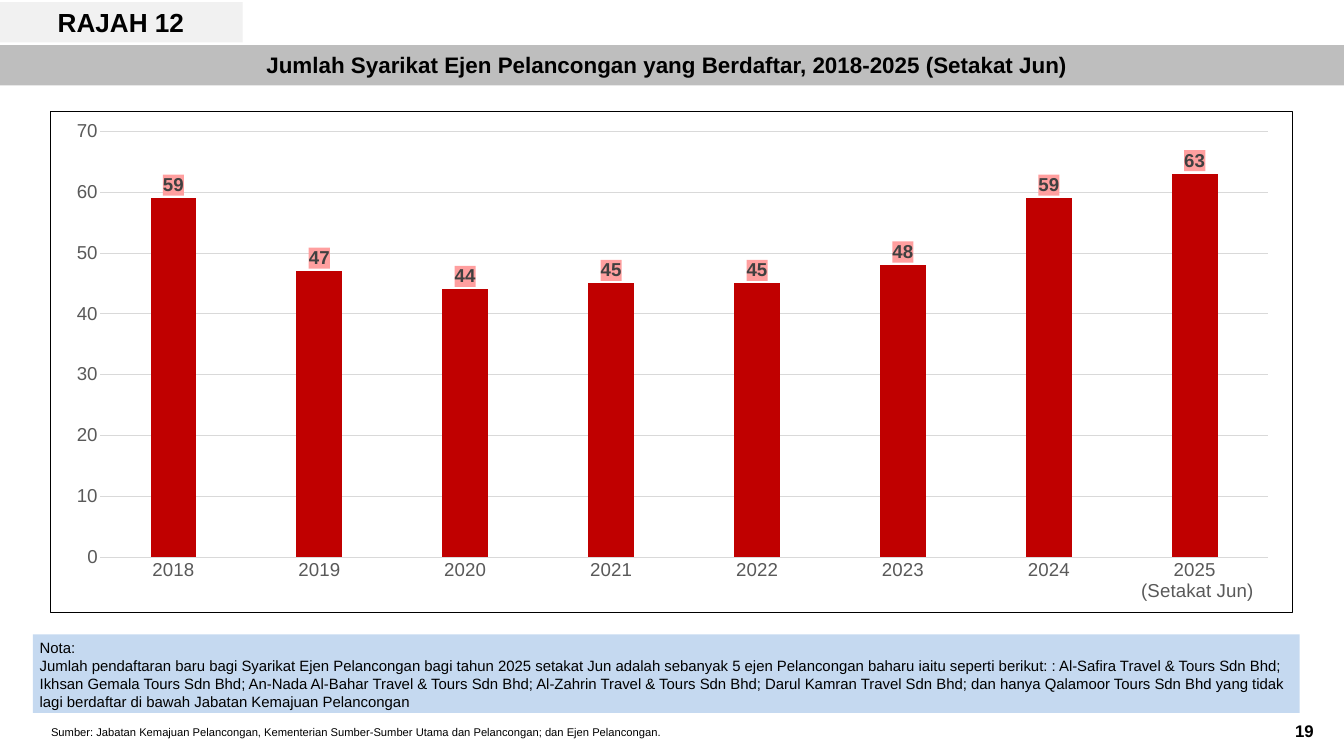
from dataclasses import dataclass
from typing import NamedTuple

from lxml import etree
from pptx import Presentation
from pptx.chart.data import CategoryChartData
from pptx.dml.color import RGBColor
from pptx.enum.chart import XL_CHART_TYPE as ChartType, XL_LABEL_POSITION as LabelPosition
from pptx.enum.chart import XL_TICK_MARK as TickMark
from pptx.enum.shapes import MSO_SHAPE as Preset
from pptx.enum.text import MSO_ANCHOR as Anchor, PP_ALIGN as Align
from pptx.oxml import parse_xml
from pptx.oxml.ns import nsdecls
from pptx.util import Pt


class Box(NamedTuple):
    """A rectangle in points."""
    left: float
    top: float
    width: float
    height: float

    def inner(self, left, top, width, height):
        """Return a box placed relative to this one."""
        return Box(self.left + left, self.top + top, width, height)

    def lengths(self):
        """Return the four sides as lengths."""
        return [Pt(side) for side in self]


@dataclass(frozen=True)
class Theme:
    """Colours, font and type sizes of the deck."""
    font: str = "Arial"
    black: str = "000000"
    white: str = "FFFFFF"
    band: str = "BEBEBE"
    tab: str = "F1F1F1"
    note: str = "C5D9F0"
    bar: str = "C00000"
    label: str = "404040"
    label_fill: str = "FF9F9F"
    axis: str = "595959"
    grid: str = "D9D9D9"
    tab_size: int = 28
    title_size: int = 24
    chart_size: int = 20
    page_size: int = 18
    note_size: int = 16
    source_size: int = 12
    hairline: float = 0.75


THEME = Theme()
PAGE = Box(0, 0, 1440, 810)
COMPANIES = {
    "2018": 59, "2019": 47, "2020": 44, "2021": 45,
    "2022": 45, "2023": 48, "2024": 59, "2025\n (Setakat Jun)": 63,
}
TITLE = "Jumlah Syarikat Ejen Pelancongan yang Berdaftar, 2018-2025 (Setakat Jun)"
NOTE = (
    "Nota:\n"
    "Jumlah pendaftaran baru bagi Syarikat Ejen Pelancongan bagi tahun 2025 setakat Jun "
    "adalah sebanyak 5 ejen Pelancongan baharu iaitu seperti berikut: : "
    "Al-Safira Travel & Tours Sdn Bhd; Ikhsan Gemala Tours Sdn Bhd; "
    "An-Nada Al-Bahar Travel & Tours Sdn Bhd; Al-Zahrin Travel & Tours Sdn Bhd; "
    "Darul Kamran Travel Sdn Bhd; dan hanya Qalamoor Tours Sdn Bhd yang tidak lagi "
    "berdaftar di bawah Jabatan Kemajuan Pelancongan"
)
SOURCE = (
    "Sumber: Jabatan Kemajuan Pelancongan, Kementerian Sumber-Sumber Utama dan "
    "Pelancongan; dan Ejen Pelancongan."
)


def style_font(font, size, color, bold=False):
    """Set the face, size, colour and weight of a font."""
    font.name, font.size, font.bold = THEME.font, Pt(size), bold
    font.color.rgb = RGBColor.from_string(color)


def add_panel(page, box, color):
    """Add a plain filled rectangle."""
    panel = page.shapes.add_shape(Preset.RECTANGLE, *box.lengths())
    panel.shadow.inherit = False
    panel.fill.solid()
    panel.fill.fore_color.rgb = RGBColor.from_string(color)
    panel.line.fill.background()
    return panel


def add_text(page, box, text, size, bold=False, align=Align.LEFT, indent=0, top=0, spacing=None):
    """Add a text box and write its text."""
    shape = page.shapes.add_textbox(*box.lengths())
    frame = shape.text_frame
    frame.word_wrap, frame.vertical_anchor = True, Anchor.TOP
    frame.margin_left = frame.margin_right = frame.margin_bottom = 0
    frame.margin_top = Pt(top)
    frame.text = text
    for para in frame.paragraphs:
        para.alignment = align
        para._p.get_or_add_pPr().set("marL", str(Pt(indent)))
        if spacing:
            para.line_spacing = spacing
        style_font(para.font, size, THEME.black, bold)
        for span in para.runs:
            style_font(span.font, size, THEME.black, bold)


def add_header(page, box):
    """Add the figure tab and the title band."""
    add_panel(page, box.inner(0, 46.2, box.width, 43.2), THEME.band)
    add_text(page, box.inner(248.4, 52, 931, 30), TITLE, THEME.title_size,
             bold=True, align=Align.CENTER, indent=0.7, top=1)
    add_panel(page, box.inner(0, 0, 260, 43.2), THEME.tab)
    add_text(page, box.inner(60.5, 3.8, 138, 35), "RAJAH 12", THEME.tab_size,
             bold=True, indent=1.4, top=1)


def shape_properties(fill, line=None):
    """Return chart shape properties with a fill and an optional outline."""
    def solid(color):
        return f'<a:solidFill><a:srgbClr val="{color}"/></a:solidFill>'
    outline = solid(line) if line else "<a:noFill/>"
    return parse_xml(
        f'<c:spPr {nsdecls("c", "a")}>{solid(fill)}'
        f'<a:ln w="{Pt(THEME.hairline)}">{outline}</a:ln></c:spPr>')


def place_plot(chart, **sides):
    """Fix the inner plot area as fractions of the chart."""
    area = chart._chartSpace.chart.plotArea
    for old in area.findall("{*}layout"):
        area.remove(old)
    parts = {"layoutTarget": "inner", "xMode": "edge", "yMode": "edge", **sides}
    layout = parse_xml(f'<c:layout {nsdecls("c")}><c:manualLayout/></c:layout>')
    for name, value in parts.items():
        tag = etree.QName(layout).namespace
        etree.SubElement(layout[0], f"{{{tag}}}{name}").set("val", str(value))
    area.insert(0, layout)


def style_axis(axis):
    """Give an axis its type and remove its tick marks."""
    style_font(axis.tick_labels.font, THEME.chart_size, THEME.axis)
    axis.major_tick_mark = axis.minor_tick_mark = TickMark.NONE


def style_line(line):
    """Make a chart line a pale hairline."""
    line.color.rgb = RGBColor.from_string(THEME.grid)
    line.width = Pt(THEME.hairline)


def add_company_chart(page, box):
    """Add the column chart of registered companies."""
    data = CategoryChartData()
    data.categories = list(COMPANIES)
    data.add_series("Series 1", list(COMPANIES.values()))
    chart = page.shapes.add_chart(ChartType.COLUMN_CLUSTERED, *box.lengths(), data).chart
    chart.has_legend = chart.has_title = False
    style_font(chart.font, THEME.chart_size, THEME.black)
    chart._chartSpace.find("{*}txPr").addprevious(shape_properties(THEME.white, THEME.black))
    place_plot(chart, x=0.04, y=0.04, w=0.94, h=0.85)

    years, counts = chart.category_axis, chart.value_axis
    style_axis(years)
    style_axis(counts)
    style_line(years.format.line)
    style_line(counts.major_gridlines.format.line)
    counts.format.line.fill.background()
    counts.minimum_scale, counts.maximum_scale, counts.major_unit = 0, 70, 10

    plot = chart.plots[0]
    plot.gap_width, plot.overlap, plot.vary_by_categories = 219, -27, False
    bars = plot.series[0]
    bars.format.fill.solid()
    bars.format.fill.fore_color.rgb = RGBColor.from_string(THEME.bar)
    labels = bars.data_labels
    labels.show_value, labels.position = True, LabelPosition.OUTSIDE_END
    style_font(labels.font, THEME.chart_size, THEME.label, bold=True)
    labels._element.find("{*}txPr").addprevious(shape_properties(THEME.label_fill))


def add_note(page, box):
    """Add the note on its tinted panel."""
    add_panel(page, box, THEME.note)
    add_text(page, box, NOTE, THEME.note_size, indent=7.2, top=4.6)


def add_footer(page, box):
    """Add the source line and the page number."""
    add_text(page, box.inner(0, 5, 657.4, 15), SOURCE, THEME.source_size,
             indent=0.7, spacing=1.19)
    add_text(page, box.inner(1330.6, 0, 34.6, 22), "19", THEME.page_size,
             bold=True, indent=2.9, spacing=1.16)


def main():
    """Build and save the deck."""
    deck = Presentation()
    deck.slide_width, deck.slide_height = Pt(PAGE.width), Pt(PAGE.height)
    page = deck.slides.add_slide(deck.slide_layouts[6])
    add_header(page, PAGE.inner(0, 2.2, PAGE.width, 89.4))
    add_footer(page, PAGE.inner(54, 769, 1365.2, 24))
    add_note(page, PAGE.inner(35.3, 679.7, 1357.2, 84.2))
    add_company_chart(page, PAGE.inner(54, 118.8, 1331.3, 537.8))
    deck.save("out.pptx")


if __name__ == "__main__":
    main()
